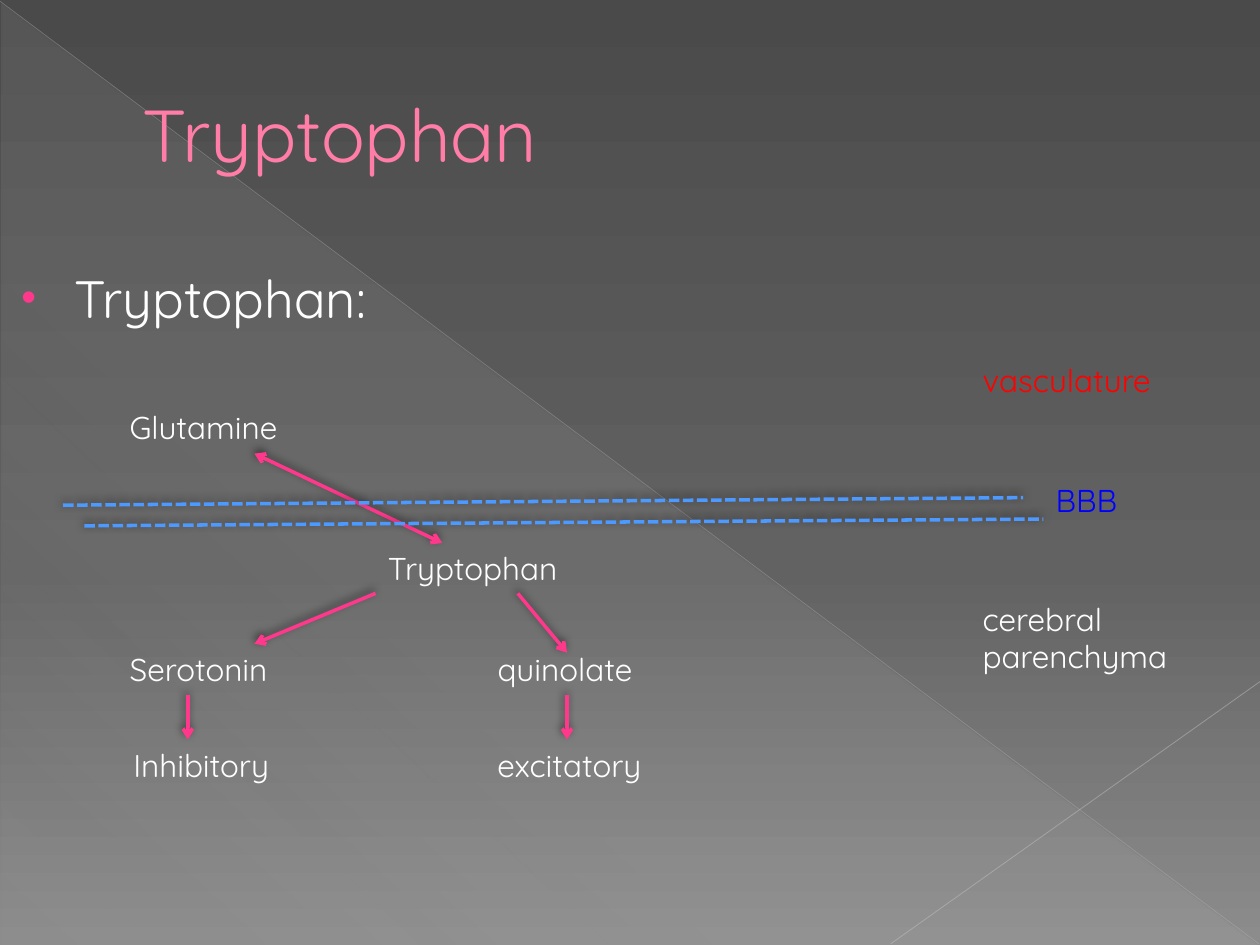
from lxml.etree import SubElement
from pptx import Presentation
from pptx.dml.color import RGBColor
from pptx.enum.dml import MSO_LINE as Dash
from pptx.enum.shapes import MSO_CONNECTOR as Link, MSO_SHAPE as Shape
from pptx.enum.text import MSO_ANCHOR as Anchor, MSO_AUTO_SIZE as Fit
from pptx.oxml import parse_xml
from pptx.oxml.ns import nsdecls, qn
from pptx.util import Pt

THEME = {
    "font": "Quicksand",
    "sizes": {"title": 42, "body": 30, "label": 18},
    "title": "FF7DA7", "title_edge": "B12761", "text": "FFFFFF",
    "accent": "FF388C", "barrier": "4C99FF", "blood": "FF0000", "bbb": "0000FF",
    "backdrop": [(0, "4A4A4A", 100), (60, "626262", 100), (100, "8C8C8C", 100)],
    "sheen": [(0, "D2D2D2", 10), (70, "D2D2D2", 8), (100, "D2D2D2", 1)],
    "shadow": ("000000", 50, 5, 2, 245),
}

SLIDE_SIZE = (720, 540)
TITLE = ("Tryptophan", (36, 20.9, 648, 110.2))
HEADING = ("Tryptophan:", (0, 148.3, 648, 360))

LEFT, CENTRE, RIGHT = 67, 277.2, 554.4
PRODUCTS, EFFECTS = 367.9, 422.6
LABELS = [
    ("Glutamine", LEFT, 229.7, 147, "text"),
    ("Tryptophan", 214.6, 310.3, 183, "text"),
    ("Serotonin", LEFT, PRODUCTS, 96.5, "text"),
    ("quinolate", CENTRE, PRODUCTS, 184, "text"),
    ("Inhibitory", 69.1, EFFECTS, 94.3, "text"),
    ("excitatory", CENTRE, EFFECTS, 168.5, "text"),
    ("BBB", 596.2, 271.4, 129.6, "bbb"),
    ("vasculature", RIGHT, 203, 129.6, "blood"),
    ("cerebral parenchyma", RIGHT, 339.1, 129.6, "text"),
]
UNWRAPPED = {"Serotonin", "Inhibitory"}

PATHWAYS = [
    ((295.9, 339.1), (324, 373), ("tailEnd",)),
    ((324, 397.4), (324, 422.6), ("tailEnd",)),
    ((107.3, 397.4), (107.3, 422.6), ("tailEnd",)),
    ((214.6, 339.1), (145.4, 367.9), ("tailEnd",)),
    ((145.4, 259.2), (252.7, 310.3), ("headEnd", "tailEnd")),
]
BARRIER = [((36, 288.7), (584.6, 284.4)), ((48.2, 300.5), (596.2, 296.6))]
RULES = [
    ((0, 0.7), (719.3, 539.3), "BFBFBF", 0.39, 35),
    ((720, 389.5), (509, 539.3), "C6C6C6", 0.47, 45),
]


def gradient(stops, angle):
    marks = "".join(
        f'<a:gs pos="{pos * 1000}"><a:srgbClr val="{color}">'
        f'<a:alpha val="{alpha * 1000}"/></a:srgbClr></a:gs>'
        for pos, color, alpha in stops)
    return parse_xml(
        f'<a:gradFill {nsdecls("a")} rotWithShape="1"><a:gsLst>{marks}</a:gsLst>'
        f'<a:lin ang="{angle * 60000}" scaled="0"/></a:gradFill>')


def paint_gradient(fill, owner, stops, angle):
    fill.solid()
    plain = next(owner.iter(qn("a:solidFill")))
    plain.getparent().replace(plain, gradient(stops, angle))


def add_line(slide, start, end, color, width):
    line = slide.shapes.add_connector(Link.STRAIGHT, *map(Pt, start + end))
    line.line.color.rgb = RGBColor.from_string(color)
    line.line.width = Pt(width)
    effects = SubElement(line._element.spPr, qn("a:effectLst"))
    return line, effects


def add_shaded_line(slide, start, end, color):
    line, effects = add_line(slide, start, end, color, 2)
    shade, alpha, blur, distance, angle = THEME["shadow"]
    effects.append(parse_xml(
        f'<a:outerShdw {nsdecls("a")} blurRad="{Pt(blur)}" dist="{Pt(distance)}" '
        f'dir="{angle * 60000}" rotWithShape="0"><a:srgbClr val="{shade}">'
        f'<a:alpha val="{alpha * 1000}"/></a:srgbClr></a:outerShdw>'))
    return line


def add_text(slide, words, box, role, color, **frame_format):
    frame = slide.shapes.add_textbox(*map(Pt, box)).text_frame
    for key, value in ({"word_wrap": True} | frame_format).items():
        setattr(frame, key, value)
    paragraph = frame.paragraphs[0]
    run = paragraph.add_run()
    run.text = words
    run.font.color.rgb = RGBColor.from_string(THEME[color])
    font_format = {"name": THEME["font"], "size": Pt(THEME["sizes"][role])}
    for key, value in font_format.items():
        setattr(run.font, key, value)
    return paragraph, run


def indent(paragraph, margin, first=0):
    properties = paragraph._p.get_or_add_pPr()
    for key, value in {"marL": margin, "indent": first}.items():
        properties.set(key, str(Pt(value)))
    return properties


def add_backdrop(slide):
    paint_gradient(slide.background.fill, slide._element, THEME["backdrop"], 90)
    sheen = slide.shapes.add_shape(
        Shape.RIGHT_TRIANGLE, *map(Pt, (0.7, 1.4, 718.6, 538.6)))
    sheen.shadow.inherit = False
    sheen.line.fill.background()
    paint_gradient(sheen.fill, sheen._element.spPr, THEME["sheen"], 133)
    for start, end, color, width, alpha in RULES:
        rule, _ = add_line(slide, start, end, color, width)
        tint = next(rule._element.spPr.iter(qn("a:srgbClr")))
        SubElement(tint, qn("a:alpha"), val=str(alpha * 1000))


def add_headings(slide):
    paragraph, run = add_text(slide, *TITLE, "title", "title",
                              vertical_anchor=Anchor.MIDDLE)
    indent(paragraph, 38.2)
    run.font._element.insert(0, parse_xml(
        f'<a:ln {nsdecls("a")} w="{Pt(0.5)}"><a:solidFill>'
        f'<a:srgbClr val="{THEME["title_edge"]}"/></a:solidFill></a:ln>'))

    paragraph, _ = add_text(slide, *HEADING, "body", "text")
    properties = indent(paragraph, 35.3, -30.2)
    tint = SubElement(properties, qn("a:buClr"))
    SubElement(tint, qn("a:srgbClr"), val=THEME["accent"])
    SubElement(properties, qn("a:buSzPct"), val="80000")
    SubElement(properties, qn("a:buFont"), typeface="Arial")
    SubElement(properties, qn("a:buChar"), char="•")


def add_diagram(slide):
    for start, end, heads in PATHWAYS:
        arrow = add_shaded_line(slide, start, end, THEME["accent"])
        for head in heads:
            SubElement(arrow.line._get_or_add_ln(), qn(f"a:{head}"), type="arrow")
    for start, end in BARRIER:
        membrane = add_shaded_line(slide, start, end, THEME["barrier"])
        membrane.line.dash_style = Dash.SQUARE_DOT
    for words, left, top, width, color in LABELS:
        height = 50.9 if " " in words else 29
        add_text(slide, words, (left, top, width, height), "label", color,
                 word_wrap=words not in UNWRAPPED,
                 auto_size=Fit.SHAPE_TO_FIT_TEXT)


def main():
    deck = Presentation()
    deck.slide_width, deck.slide_height = map(Pt, SLIDE_SIZE)
    slide = deck.slides.add_slide(deck.slide_layouts[6])
    add_backdrop(slide)
    add_headings(slide)
    add_diagram(slide)
    deck.save("out.pptx")


if __name__ == "__main__":
    main()
